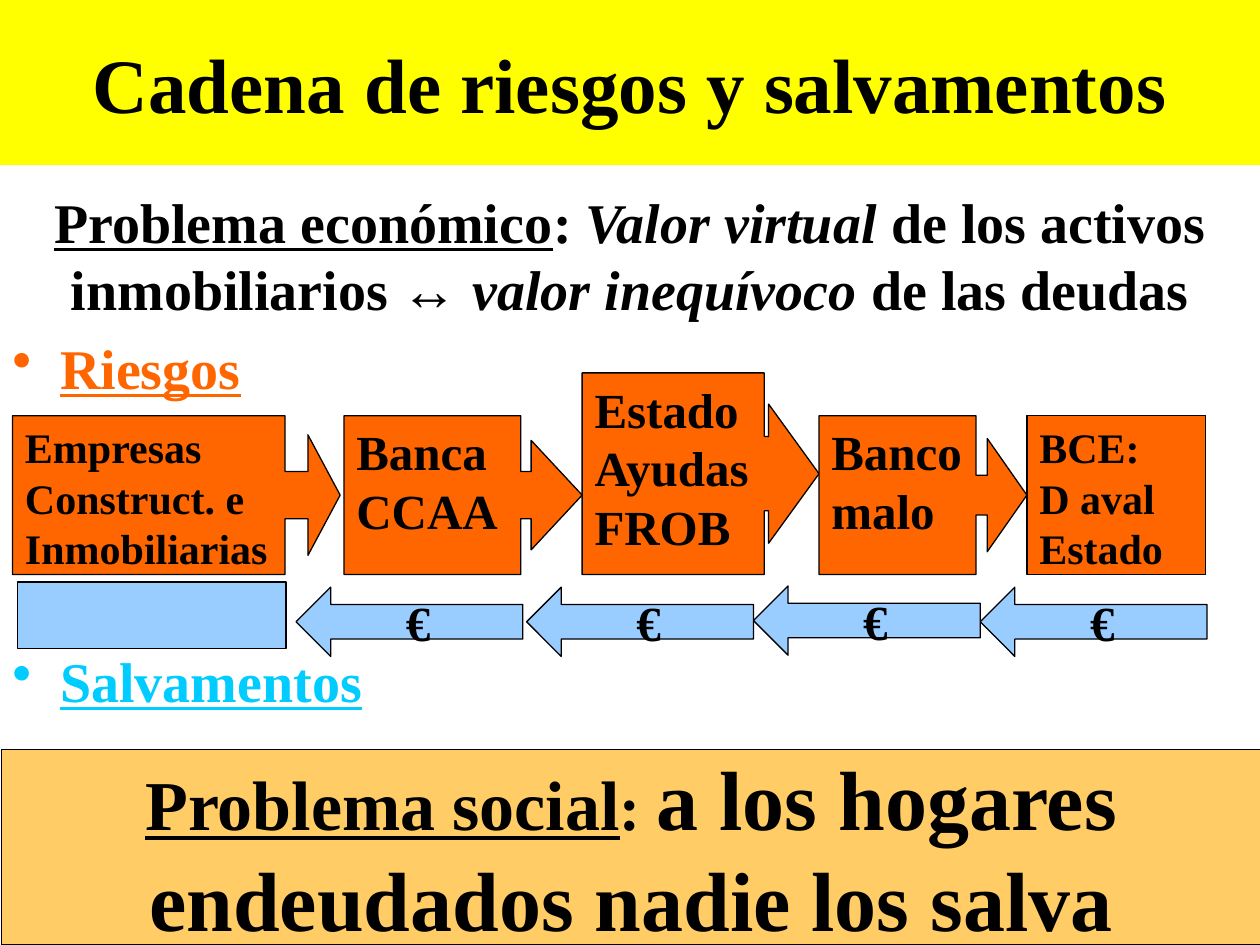
from dataclasses import dataclass

from lxml.etree import SubElement
from pptx import Presentation
from pptx.dml.color import RGBColor as Rgb
from pptx.enum.shapes import MSO_SHAPE as Kind
from pptx.enum.text import MSO_ANCHOR as Anchor, PP_ALIGN as Align
from pptx.oxml.ns import qn
from pptx.util import Inches, Pt


@dataclass(frozen=True)
class Theme:
    """Hold the colours, font and type sizes of the slide."""
    font: str = "Times New Roman"
    ink: str = "000000"
    title: str = "FFFF00"
    risk: str = "FF6600"
    rescue: str = "99CCFF"
    point: str = "00CCFF"
    social: str = "FFCC66"
    head: int = 44
    body: int = 32
    big: int = 28
    small: int = 24
    label: int = 40
    colon: int = 36
    claim: int = 48
    gap: float = 6.4
    edge: float = 0.75


THEME = Theme()


def style(run, size, color=THEME.ink, line=False, slant=False):
    """Format one run in the bold slide font."""
    font = run.font
    font.name, font.size, font.bold = THEME.font, Pt(size), True
    font.underline, font.italic = line, slant
    font.color.rgb = Rgb.from_string(color)


def write(frame, text, size, align=Align.LEFT):
    """Set plain text in one size."""
    frame.text = text
    for para in frame.paragraphs:
        para.alignment = align
        for run in para.runs:
            style(run, size)


def mix(para, parts):
    """Fill a centred paragraph with runs of differing format."""
    para.alignment = Align.CENTER
    for text, size, look in parts:
        run = para.add_run()
        run.text = text
        style(run, size, **look)


def bullet(para, text, color):
    """Fill a paragraph as an underlined bullet point."""
    para.text = text
    style(para.runs[0], THEME.body, color, line=True)
    props = para._p.get_or_add_pPr()
    props.set("marL", str(Inches(0.38)))
    props.set("indent", str(-Inches(0.38)))
    SubElement(props, qn("a:buChar")).set("char", "•")


def block(slide, kind, at, fill, edge=True, adjust=(), anchor=Anchor.TOP):
    """Add a filled shape and return its text frame."""
    shape = slide.shapes.add_shape(kind, *map(Inches, at))
    shape.shadow.inherit = False
    shape.fill.solid()
    shape.fill.fore_color.rgb = Rgb.from_string(fill)
    if edge:
        shape.line.color.rgb = Rgb.from_string(THEME.ink)
        shape.line.width = Pt(THEME.edge)
    else:
        shape.line.fill.background()
    for i, value in enumerate(adjust):
        shape.adjustments[i] = value
    frame = shape.text_frame
    frame.word_wrap = True
    frame.vertical_anchor = anchor
    return frame


def box(slide, at):
    """Add a wrapping text box and return its text frame."""
    frame = slide.shapes.add_textbox(*map(Inches, at)).text_frame
    frame.word_wrap = True
    return frame


def intro(slide):
    """Add the economic problem and both bullet points."""
    size = THEME.body
    frame = box(slide, (0, 1.44, 10, 1.8))
    mix(frame.paragraphs[0], [
        ("Problema económico", size, {"line": True}),
        (": ", size, {}),
        ("Valor virtual", size, {"slant": True}),
        (" de los activos inmobiliarios ↔ ", size, {}),
        ("valor inequívoco", size, {"slant": True}),
        (" de las deudas", size, {}),
    ])
    para = frame.add_paragraph()
    bullet(para, "Riesgos", THEME.risk)
    para.space_before = Pt(THEME.gap)
    rescue = box(slide, (0, 5.08, 10, 0.61))
    bullet(rescue.paragraphs[0], "Salvamentos", THEME.point)


def risks(slide):
    """Add the chain of risk holders, all ending on one base line."""
    base = 4.56
    call, rect = Kind.RIGHT_ARROW_CALLOUT, Kind.RECTANGLE
    chain = [
        (call, 0.1, 2.6, 1.26, THEME.small, "Empresas\nConstruct. e\nInmobiliarias",
         (0.297, 0.38, 0.203, 0.832)),
        (call, 2.73, 1.89, 1.26, THEME.big, "Banca\nCCAA",
         (0.297, 0.345, 0.321, 0.742)),
        (call, 4.62, 1.88, 1.6, THEME.big, "Estado\vAyudas\nFROB",
         (0.368, 0.345, 0.25, 0.769)),
        (call, 6.5, 1.65, 1.26, THEME.big, "Banco\nmalo",
         (0.25, 0.357, 0.25, 0.755)),
        (rect, 8.15, 1.42, 1.26, THEME.small, "BCE:\nD aval\nEstado", ()),
    ]
    for kind, left, width, high, size, text, adjust in chain:
        at = (left, base - high, width, high)
        write(block(slide, kind, at, THEME.risk, adjust=adjust), text, size)


def rescues(slide):
    """Add the money arrows that run back along the chain."""
    block(slide, Kind.RECTANGLE, (0.14, 4.62, 2.13, 0.53), THEME.rescue)
    for left, top in ((7.78, 4.66), (5.98, 4.65), (4.18, 4.66), (2.35, 4.66)):
        frame = block(slide, Kind.LEFT_ARROW, (left, top, 1.8, 0.55),
                      THEME.rescue, anchor=Anchor.MIDDLE)
        write(frame, "€", THEME.big, Align.CENTER)


def main():
    """Build and save the slide."""
    deck = Presentation()
    deck.slide_width, deck.slide_height = Inches(10), Inches(7.5)
    slide = deck.slides.add_slide(deck.slide_layouts[6])
    title = block(slide, Kind.RECTANGLE, (0, 0, 10, 1.31), THEME.title,
                  edge=False, anchor=Anchor.MIDDLE)
    write(title, "Cadena de riesgos y salvamentos", THEME.head, Align.CENTER)
    intro(slide)
    risks(slide)
    rescues(slide)
    social = block(slide, Kind.RECTANGLE, (0.01, 5.95, 10, 1.55), THEME.social,
                   anchor=Anchor.MIDDLE)
    mix(social.paragraphs[0], [
        ("Problema social", THEME.label, {"line": True}),
        (": ", THEME.colon, {}),
        ("a los hogares endeudados nadie los salva", THEME.claim, {}),
    ])
    deck.save("out.pptx")


if __name__ == "__main__":
    main()
